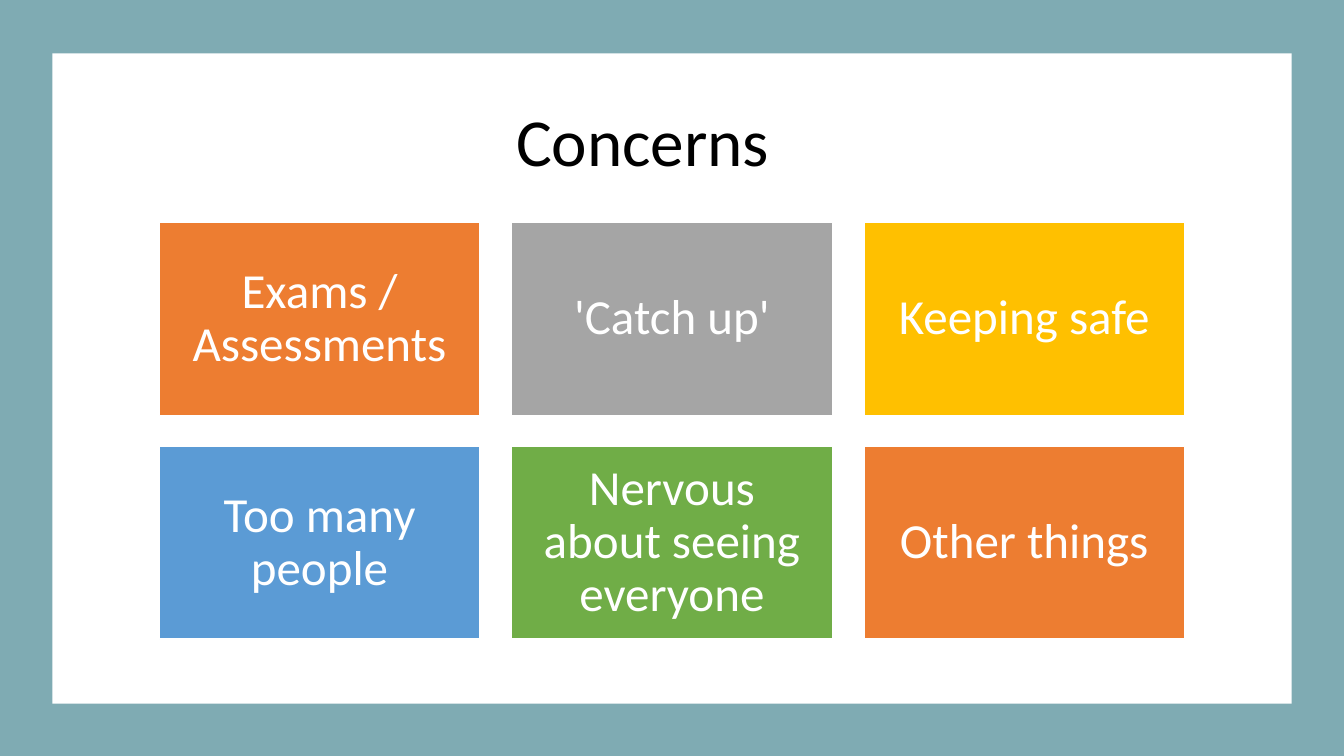
from pptx import Presentation
from pptx import util as u
from pptx.dml.color import RGBColor
from pptx.enum import shapes, text

TITLE = "Concerns"
CARDS = [
    ("Exams / Assessments", "orange"),
    ("'Catch up'", "grey"),
    ("Keeping safe", "gold"),
    ("Too many people", "blue"),
    ("Nervous about seeing everyone", "green"),
    ("Other things", "orange"),
]
THEME = {
    "font": "Calibri",
    "size": {"title": 48, "card": 35},
    "color": {
        "frame": "7FABB3", "white": "FFFFFF", "black": "000000",
        "orange": "ED7D31", "grey": "A5A5A5", "gold": "FFC000",
        "blue": "5B9BD5", "green": "70AD47",
    },
}
WIDE, HIGH = 13.33, 7.5
COLS = 3
LEFT, TOP = 1.58, 2.21
CARD_W, CARD_H = 3.18, 1.91
STEP_X, STEP_Y = 3.495, 2.22


def color(name):
    return RGBColor.from_string(THEME["color"][name])


def place(*box):
    return [u.Inches(side) for side in box]


def panel(slide, box, fill, line=None):
    shape = slide.shapes.add_shape(shapes.MSO_SHAPE.RECTANGLE, *place(*box))
    shape.shadow.inherit = False
    shape.fill.solid()
    shape.fill.fore_color.rgb = color(fill)
    if line:
        shape.line.color.rgb = color(line)
        shape.line.width = u.Pt(1)
    else:
        shape.line.fill.background()
    return shape


def write(shape, words, role, ink, anchor, pad=(0.1, 0.05)):
    frame = shape.text_frame
    frame.word_wrap = True
    frame.vertical_anchor = anchor
    frame.margin_left = frame.margin_right = u.Inches(pad[0])
    frame.margin_top = frame.margin_bottom = u.Inches(pad[1])
    para = frame.paragraphs[0]
    para.alignment = text.PP_ALIGN.CENTER
    para.line_spacing = 0.9
    run = para.add_run()
    run.text = words
    run.font.name = THEME["font"]
    run.font.size = u.Pt(THEME["size"][role])
    run.font.color.rgb = color(ink)


def main():
    deck = Presentation()
    deck.slide_width, deck.slide_height = place(WIDE, HIGH)
    slide = deck.slides.add_slide(deck.slide_layouts[6])

    panel(slide, (0, 0, WIDE, HIGH), "frame")
    panel(slide, (0.52, 0.53, 12.29, 6.45), "white")

    title = slide.shapes.add_textbox(*place(0.87, 0.42, 11.01, 1.42))
    write(title, TITLE, "title", "black", text.MSO_ANCHOR.BOTTOM)

    for i, (words, fill) in enumerate(CARDS):
        row, col = divmod(i, COLS)
        box = (LEFT + col * STEP_X, TOP + row * STEP_Y, CARD_W, CARD_H)
        card = panel(slide, box, fill, line="white")
        write(card, words, "card", "white", text.MSO_ANCHOR.MIDDLE, pad=(0.15, 0.15))

    deck.save("out.pptx")


if __name__ == "__main__":
    main()
